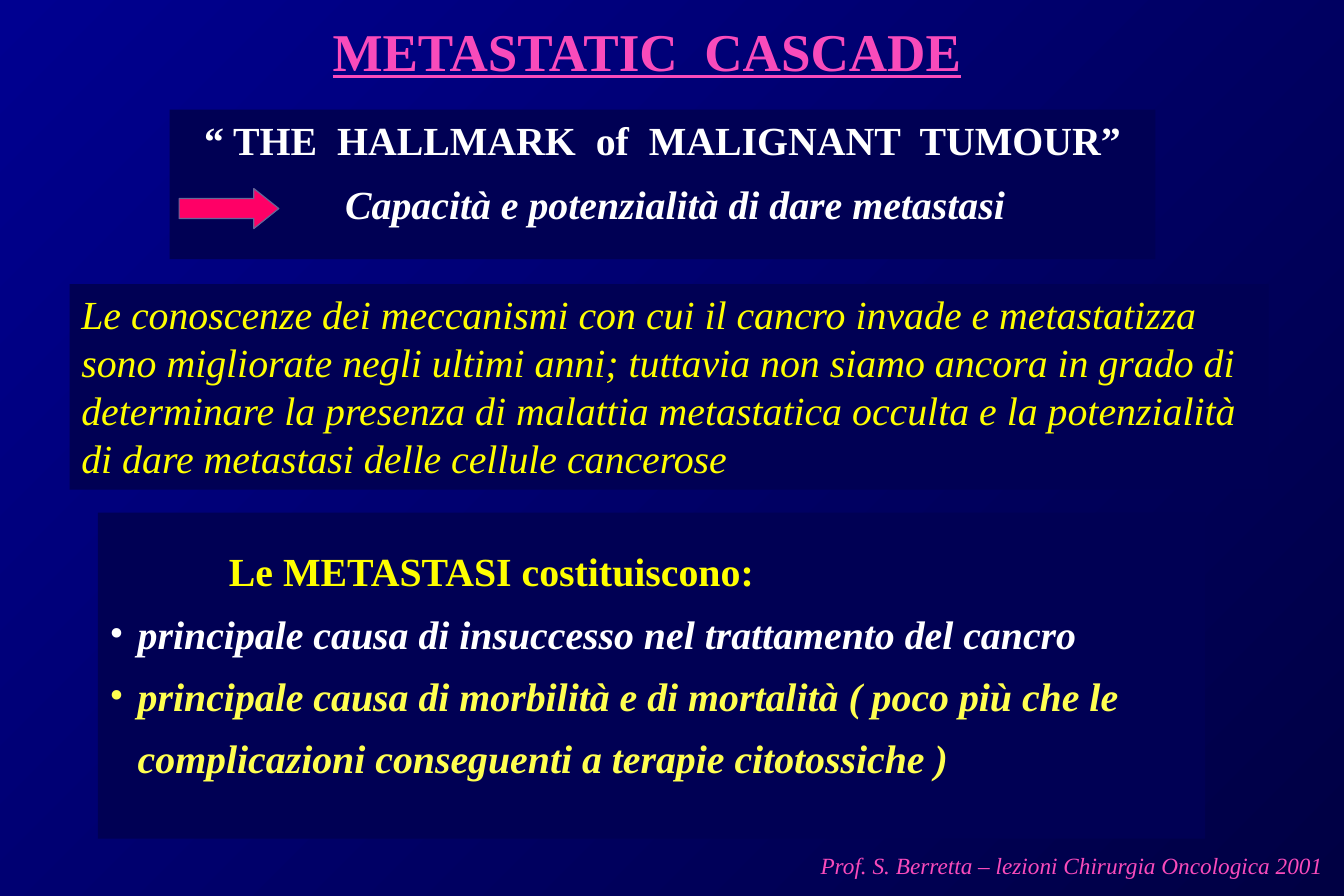
from lxml import etree
from pptx import Presentation
from pptx import util as u
from pptx.dml import color
from pptx.enum import shapes, text
from pptx.oxml import ns

COLOURS = {"pink": "F94BBB", "white": "FFFFFF", "yellow": "FFFF00", "pale": "FFFF50",
           "panel": "000054", "arrow": "FF0066", "edge": "666699",
           "light": "000090", "dark": "000043"}
FONT = "Times New Roman"


def rgb(name):
    """Return the named colour."""
    return color.RGBColor.from_string(COLOURS[name])


def add_box(page, box, panel=True, wrap=True, anchor=text.MSO_ANCHOR.TOP):
    """Add a text area, with a dark panel behind it if asked, and return its frame."""
    if panel:
        shape = page.shapes.add_shape(shapes.MSO_SHAPE.RECTANGLE, *map(u.Cm, box))
        shape.shadow.inherit = False
        shape.fill.solid()
        shape.fill.fore_color.rgb = rgb("panel")
        shape.line.fill.background()
    else:
        shape = page.shapes.add_textbox(*map(u.Cm, box))
    frame = shape.text_frame
    frame.word_wrap = wrap
    frame.vertical_anchor = anchor
    return frame


def add_para(frame, words, colour, size=24, indent=(0, 0), bullet=None, layout=None, **font):
    """Write one paragraph in the frame, using its empty first one if there is one."""
    para = frame.paragraphs[0] if not frame.text else frame.add_paragraph()
    for name, value in ({"alignment": text.PP_ALIGN.LEFT} | (layout or {})).items():
        setattr(para, name, value)
    properties = para._p.get_or_add_pPr()
    left, first = indent
    properties.set("marL", str(u.Cm(left)))
    properties.set("indent", str(u.Cm(first)))
    if bullet:
        etree.SubElement(properties, ns.qn("a:buFont"), typeface=FONT)
        etree.SubElement(properties, ns.qn("a:buChar"), char=bullet)
    span = para.add_run()
    span.text = words
    for name, value in ({"name": FONT, "size": u.Pt(size)} | font).items():
        setattr(span.font, name, value)
    span.font.color.rgb = rgb(colour)


def add_title(page, box):
    """Place the underlined heading."""
    frame = add_box(page, box, panel=False, anchor=text.MSO_ANCHOR.MIDDLE)
    add_para(frame, "METASTATIC  CASCADE", "pink", 32, bold=True, underline=True,
             layout={"alignment": text.PP_ALIGN.CENTER})


def add_hallmark(page, box):
    """Place the hallmark panel with the arrow that points to its second line."""
    frame = add_box(page, box)
    add_para(frame, "“ THE  HALLMARK  of  MALIGNANT  TUMOUR”", "white", bold=True,
             layout={"alignment": text.PP_ALIGN.CENTER})
    add_para(frame, "Capacità e potenzialità di dare metastasi", "white", indent=(3.48, 0),
             bold=True, italic=True, layout={"space_before": u.Pt(10)})
    left, top = box[:2]
    arrow = page.shapes.add_shape(shapes.MSO_SHAPE.RIGHT_ARROW, u.Cm(left + 0.2),
                                  u.Cm(top + 1.68), u.Cm(2.12), u.Cm(0.85))
    arrow.adjustments[1] = 0.625
    arrow.shadow.inherit = False
    arrow.fill.solid()
    arrow.fill.fore_color.rgb = rgb("arrow")
    arrow.line.color.rgb = rgb("edge")
    arrow.line.width = u.Pt(0.75)


def add_knowledge(page, box):
    """Place the panel on what is known, one paragraph a line."""
    frame = add_box(page, box, wrap=False)
    for line in ("Le conoscenze dei meccanismi con cui il cancro invade e metastatizza",
                 "sono migliorate negli ultimi anni; tuttavia non siamo ancora in grado di",
                 "determinare la presenza di malattia metastatica occulta e la potenzialità",
                 "di dare metastasi delle cellule cancerose"):
        add_para(frame, line, "yellow", italic=True)


def add_consequences(page, box):
    """Place the panel with a lead line and two bullets."""
    frame = add_box(page, box)
    add_para(frame, "Le METASTASI costituiscono:", "yellow", indent=(2.54, 0), bold=True,
             layout={"line_spacing": 1.6})
    for words, colour in (
            ("principale causa di insuccesso nel trattamento del cancro", "white"),
            ("principale causa di morbilità e di mortalità ( poco più che le "
             "complicazioni conseguenti a terapie citotossiche )", "pale")):
        add_para(frame, words, colour, indent=(0.6, -0.6), bullet="•", bold=True,
                 italic=True, layout={"line_spacing": 1.3})


def add_credit(page, box):
    """Place the lecture line at the foot."""
    frame = add_box(page, box, panel=False, wrap=False)
    add_para(frame, "Prof. S. Berretta – lezioni Chirurgia Oncologica 2001", "pink", 14,
             italic=True)


def paint_background(page):
    """Fill the page with a diagonal blue gradient."""
    fill = page.background.fill
    fill.gradient()
    fill.gradient_angle = 315
    for stop, name in zip(fill.gradient_stops, ("light", "dark")):
        stop.color.rgb = rgb(name)


def main():
    """Build the deck and save it."""
    deck = Presentation()
    deck.slide_width, deck.slide_height = u.Cm(28.58), u.Cm(19.05)
    page = deck.slides.add_slide(deck.slide_layouts[6])
    paint_background(page)
    add_title(page, (5.72, 0.64, 16.08, 0.84))
    add_hallmark(page, (3.61, 2.33, 20.96, 3.18))
    add_credit(page, (17.2, 17.98, 11.23, 0.84))
    add_consequences(page, (2.08, 10.9, 23.55, 6.93))
    add_knowledge(page, (1.48, 6.04, 25.5, 4.37))
    deck.save("out.pptx")


if __name__ == "__main__":
    main()
